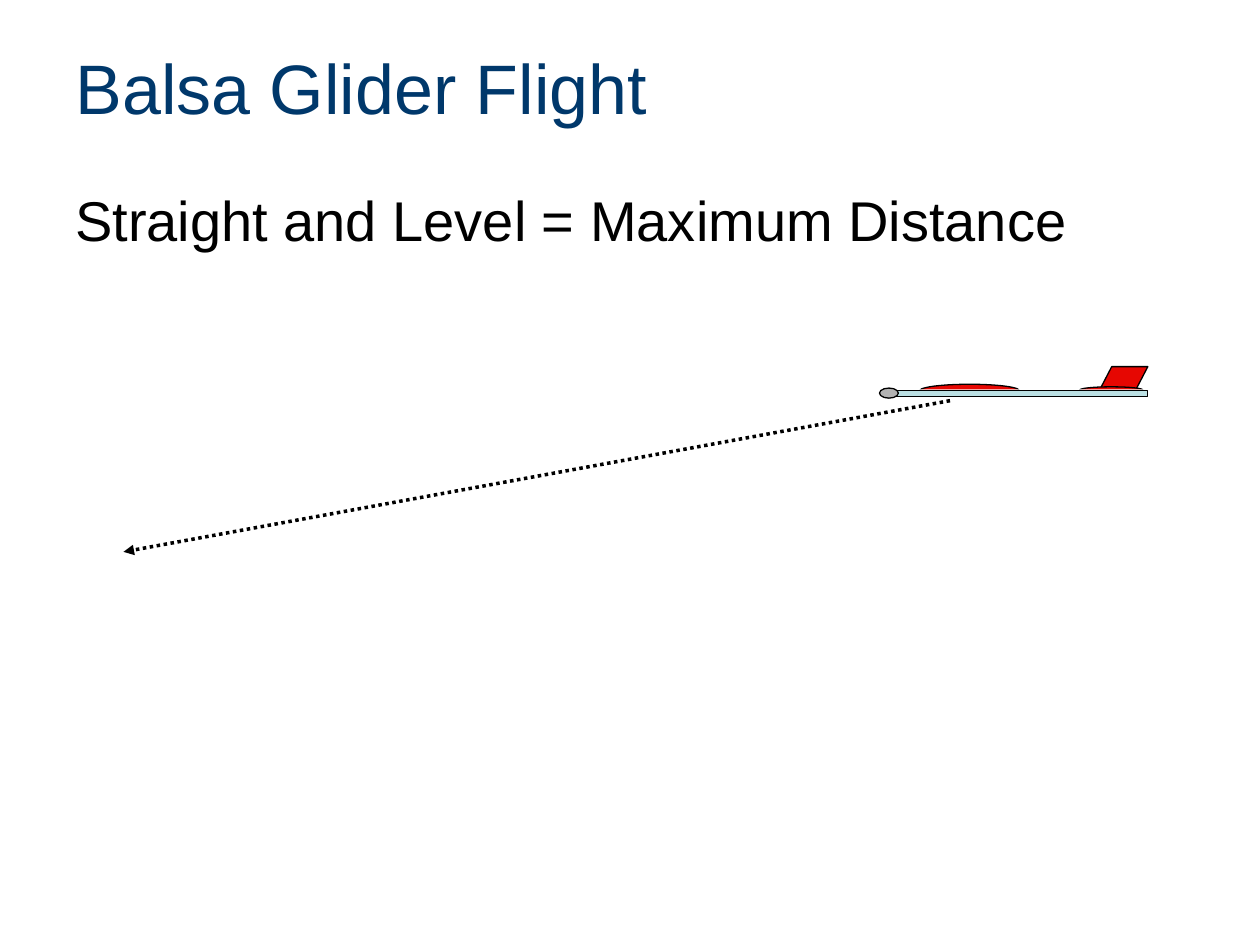
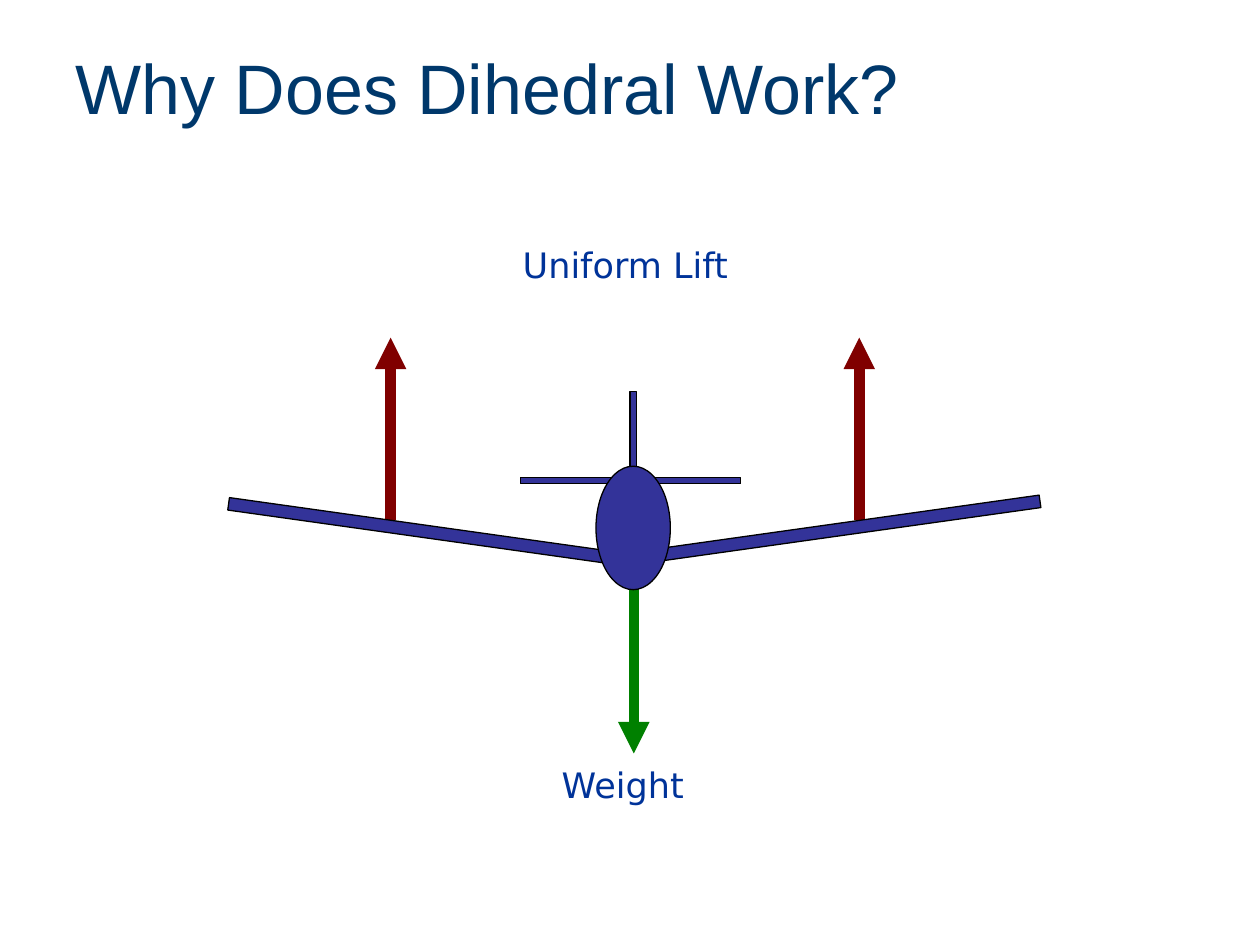
import pptx
import pptx.util
import pptx.dml.color
import pptx.enum.dml
import pptx.enum.shapes
import pptx.enum.text
import pptx.oxml.ns
import lxml.etree

Inches = pptx.util.Inches
Pt = pptx.util.Pt
RGBColor = pptx.dml.color.RGBColor
SHAPE = pptx.enum.shapes.MSO_SHAPE
DASH = pptx.enum.dml.MSO_LINE
ANCHOR = pptx.enum.text.MSO_ANCHOR
ALIGN = pptx.enum.text.PP_ALIGN
qn = pptx.oxml.ns.qn

BLACK = RGBColor(0x00, 0x00, 0x00)
WHITE = RGBColor(0xFF, 0xFF, 0xFF)
TITLE_BLUE = RGBColor(0x00, 0x38, 0x6B)
LABEL_BLUE = RGBColor(0x00, 0x33, 0x99)
PLANE_BLUE = RGBColor(0x33, 0x33, 0x99)
GLIDER_RED = RGBColor(0xE6, 0x07, 0x02)
BALSA = RGBColor(0xBB, 0xE0, 0xE3)
NOSE_GREY = RGBColor(0xB2, 0xB2, 0xB2)
LIFT_RED = RGBColor(0x80, 0x00, 0x00)
WEIGHT_GREEN = RGBColor(0x00, 0x80, 0x00)

TITLE_BOX = (0.5, 0.3, 9, 0.78)
BODY_BOX = (0.5, 1.42, 9, 5.28)
GLIDER_BOX = (6.98, 2.91, 2.13, 0.25)
AIRPLANE_BOX = (1.8, 3.11, 6.47, 1.57)


def style_text(frame, text, size, font, colour):
    frame.text = text
    for span in frame.paragraphs[0].runs:
        span.font.size = Pt(size)
        span.font.name = font
        span.font.color.rgb = colour


def add_page(deck, text):
    page = deck.slides.add_slide(deck.slide_layouts[5])
    title = page.shapes.title
    title.left, title.top, title.width, title.height = map(Inches, TITLE_BOX)
    style_text(title.text_frame, text, 40, "Arial", TITLE_BLUE)
    title.text_frame.vertical_anchor = ANCHOR.MIDDLE
    title.text_frame.paragraphs[0].alignment = ALIGN.LEFT
    return page


def add_part(page, box, kind, place, fill, outlined=True):
    left, top, width, height = place
    part = page.shapes.add_shape(
        kind, Inches(box[0] + left), Inches(box[1] + top), Inches(width), Inches(height))
    part.shadow.inherit = False
    part.fill.solid()
    part.fill.fore_color.rgb = fill
    if outlined:
        part.line.color.rgb = BLACK
        part.line.width = Pt(0.75)
    else:
        part.line.fill.background()
    return part


def add_arrow(page, start, end, colour, width):
    arrow = page.shapes.add_connector(
        pptx.enum.shapes.MSO_CONNECTOR.STRAIGHT, *map(Inches, start + end))
    arrow.line.color.rgb = colour
    arrow.line.width = Pt(width)
    outline = arrow.line._get_or_add_ln()
    lxml.etree.SubElement(outline, qn("a:tailEnd")).set("type", "triangle")
    lxml.etree.SubElement(arrow._element.spPr, qn("a:effectLst"))
    return arrow


def add_body(page, box, text):
    body = page.shapes.add_textbox(*map(Inches, box))
    body.text_frame.word_wrap = True
    style_text(body.text_frame, text, 32, "Arial", BLACK)
    body.text_frame.paragraphs[0].space_before = Pt(4)


def add_label(page, box, text):
    label = page.shapes.add_textbox(*map(Inches, box))
    label.text_frame.word_wrap = False
    style_text(label.text_frame, text, 20, "DejaVu Sans", LABEL_BLUE)


def draw_glider(page, box):
    fin = add_part(page, box, SHAPE.PARALLELOGRAM, (1.75, 0, 0.38, 0.18), GLIDER_RED)
    fin.adjustments[0] = 0.519
    surfaces = [
        ((1.59, 0.16, 0.5, 0.05), (1.55, 0.18, 0.58, 0.05)),
        ((0.32, 0.14, 0.79, 0.1), (0.25, 0.18, 0.92, 0.1)),
    ]
    for surface, mask in surfaces:
        add_part(page, box, SHAPE.OVAL, surface, GLIDER_RED)
        add_part(page, box, SHAPE.RECTANGLE, mask, WHITE, outlined=False)
    add_part(page, box, SHAPE.RECTANGLE, (0.04, 0.19, 2.09, 0.05), BALSA)
    add_part(page, box, SHAPE.OVAL, (0, 0.17, 0.15, 0.08), NOSE_GREY)


def draw_airplane(page, box):
    beams = [
        ((3.2, 0, 0.05, 0.65), 0),
        ((2.33, 0.68, 1.75, 0.05), 0),
        ((0, 1.05, 3.03, 0.1), 8),
        ((3.44, 1.03, 3.03, 0.1), -8),
    ]
    for place, angle in beams:
        add_part(page, box, SHAPE.RECTANGLE, place, PLANE_BLUE).rotation = angle
    add_part(page, box, SHAPE.OVAL, (2.93, 0.59, 0.59, 0.98), PLANE_BLUE)


def build_flight_page(deck):
    page = add_page(deck, "Balsa Glider Flight")
    add_body(page, BODY_BOX, "Straight and Level = Maximum Distance")
    draw_glider(page, GLIDER_BOX)
    glide = add_arrow(page, (7.54, 3.18), (0.98, 4.38), BLACK, 2)
    glide.line.dash_style = DASH.ROUND_DOT


def build_dihedral_page(deck):
    page = add_page(deck, "Why Does Dihedral Work?")
    add_label(page, (4.36, 6.01, 1.18, 0.43), "Weight")
    add_label(page, (4.05, 1.88, 1.85, 0.43), "Uniform Lift")
    for wing_centre in (3.1, 6.82):
        add_arrow(page, (wing_centre, 4.13), (wing_centre, 2.68), LIFT_RED, 6)
    add_arrow(page, (5.03, 4.62), (5.03, 5.98), WEIGHT_GREEN, 6)
    draw_airplane(page, AIRPLANE_BOX)


def main():
    deck = pptx.Presentation()
    deck.slide_width = Inches(10)
    deck.slide_height = Inches(7.5)
    build_flight_page(deck)
    build_dihedral_page(deck)
    deck.save("out.pptx")


if __name__ == "__main__":
    main()
